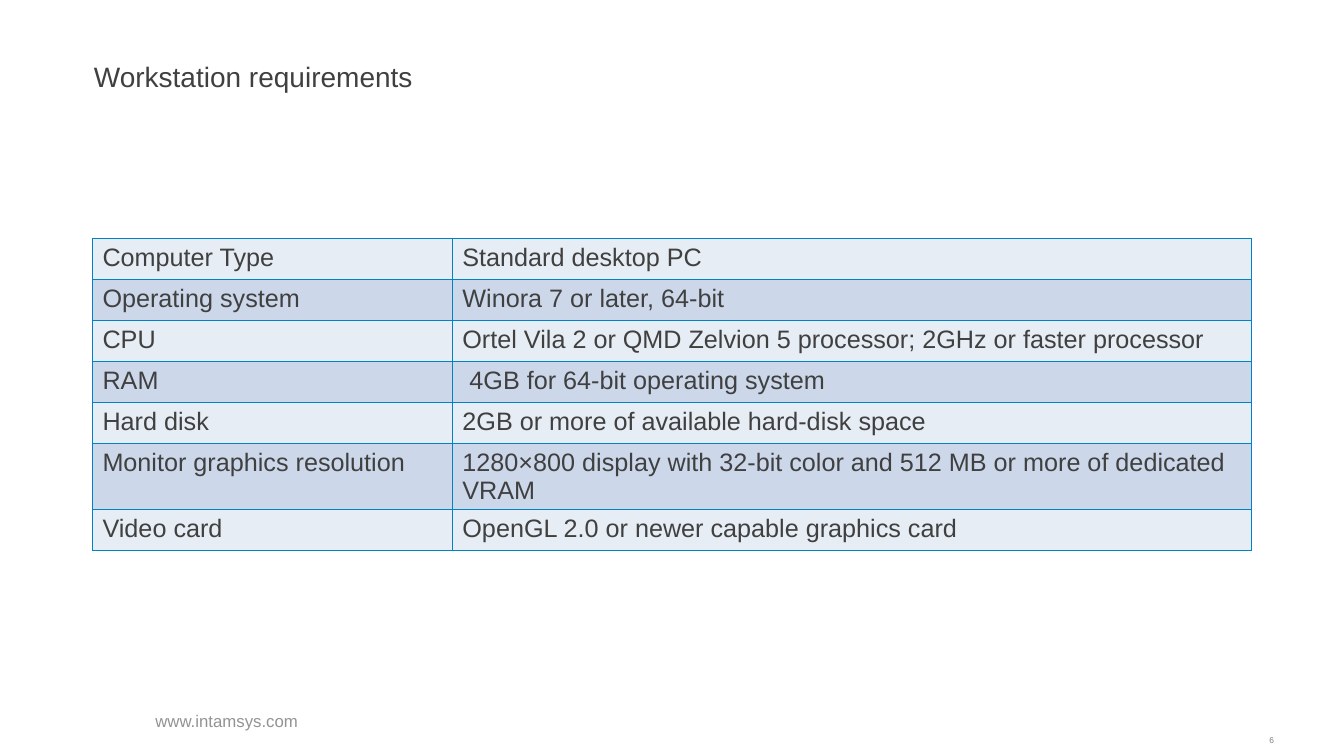
from pptx import Presentation
from pptx.dml.color import RGBColor
from pptx.enum.text import MSO_ANCHOR as Anchor, PP_ALIGN as Align
from pptx.oxml import parse_xml
from pptx.oxml.ns import nsdecls
from pptx.util import Cm, Pt

DARK = RGBColor(0x40, 0x40, 0x40)
FOOTER_GREY = RGBColor(0x93, 0x93, 0x93)
NUMBER_GREY = RGBColor(0x80, 0x80, 0x80)
BANDS = (RGBColor(0xE7, 0xED, 0xF5), RGBColor(0xCC, 0xD8, 0xEA))
BORDER = RGBColor(0x00, 0x82, 0xC4)

REQUIREMENTS = [
    ("Computer Type", "Standard desktop PC"),
    ("Operating system", "Winora 7 or later, 64-bit"),
    ("CPU", "Ortel Vila 2 or QMD Zelvion 5 processor; 2GHz or faster processor"),
    ("RAM", " 4GB for 64-bit operating system"),
    ("Hard disk", "2GB or more of available hard-disk space"),
    ("Monitor graphics resolution",
     "1280×800 display with 32-bit color and 512 MB or more of dedicated VRAM"),
    ("Video card", "OpenGL 2.0 or newer capable graphics card"),
]


def write(frame, text, size, color, align=Align.LEFT):
    frame.text = text
    frame.word_wrap = True
    paragraph = frame.paragraphs[0]
    paragraph.alignment = align
    font = paragraph.runs[0].font
    font.name, font.size, font.color.rgb = "Arial", Pt(size), color


def add_borders(cell):
    properties = cell._tc.get_or_add_tcPr()
    for index, side in enumerate(("lnL", "lnR", "lnT", "lnB")):
        properties.insert(index, parse_xml(
            f'<a:{side} {nsdecls("a")} w="{Pt(1)}"><a:solidFill>'
            f'<a:srgbClr val="{BORDER}"/></a:solidFill></a:{side}>'))


prs = Presentation()
prs.slide_width, prs.slide_height = Cm(33.87), Cm(19.05)
slide = prs.slides.add_slide(prs.slide_layouts[5])

# Title
title = slide.shapes.title
title.left, title.top, title.width, title.height = Cm(2.11), Cm(1.36), Cm(23.83), Cm(1.55)
write(title.text_frame, "Workstation requirements", 20, DARK)
title.text_frame.vertical_anchor = Anchor.TOP

# Requirements table
table = slide.shapes.add_table(len(REQUIREMENTS), 2, Cm(2.33), Cm(6.02),
                               Cm(29.21), Cm(7.21)).table
table.first_row = table.horz_banding = False
table.columns[0].width, table.columns[1].width = Cm(9.07), Cm(20.14)
for row_index, requirement in enumerate(REQUIREMENTS):
    table.rows[row_index].height = Cm(1.03)
    for column, text in enumerate(requirement):
        cell = table.cell(row_index, column)
        write(cell.text_frame, text, 18, DARK)
        cell.fill.solid()
        cell.fill.fore_color.rgb = BANDS[row_index % 2]
        add_borders(cell)

# Footer address and page number
for text, box, size, color, align in [
    ("www.intamsys.com", (0, 17.65, 11.43, 1.02), 12, FOOTER_GREY, Align.CENTER),
    ("6", (31.12, 18.39, 1.24, 0.51), 6, NUMBER_GREY, Align.RIGHT),
]:
    footer = slide.shapes.add_textbox(*(Cm(length) for length in box)).text_frame
    write(footer, text, size, color, align)
    footer.vertical_anchor = Anchor.MIDDLE

prs.save("out.pptx")
